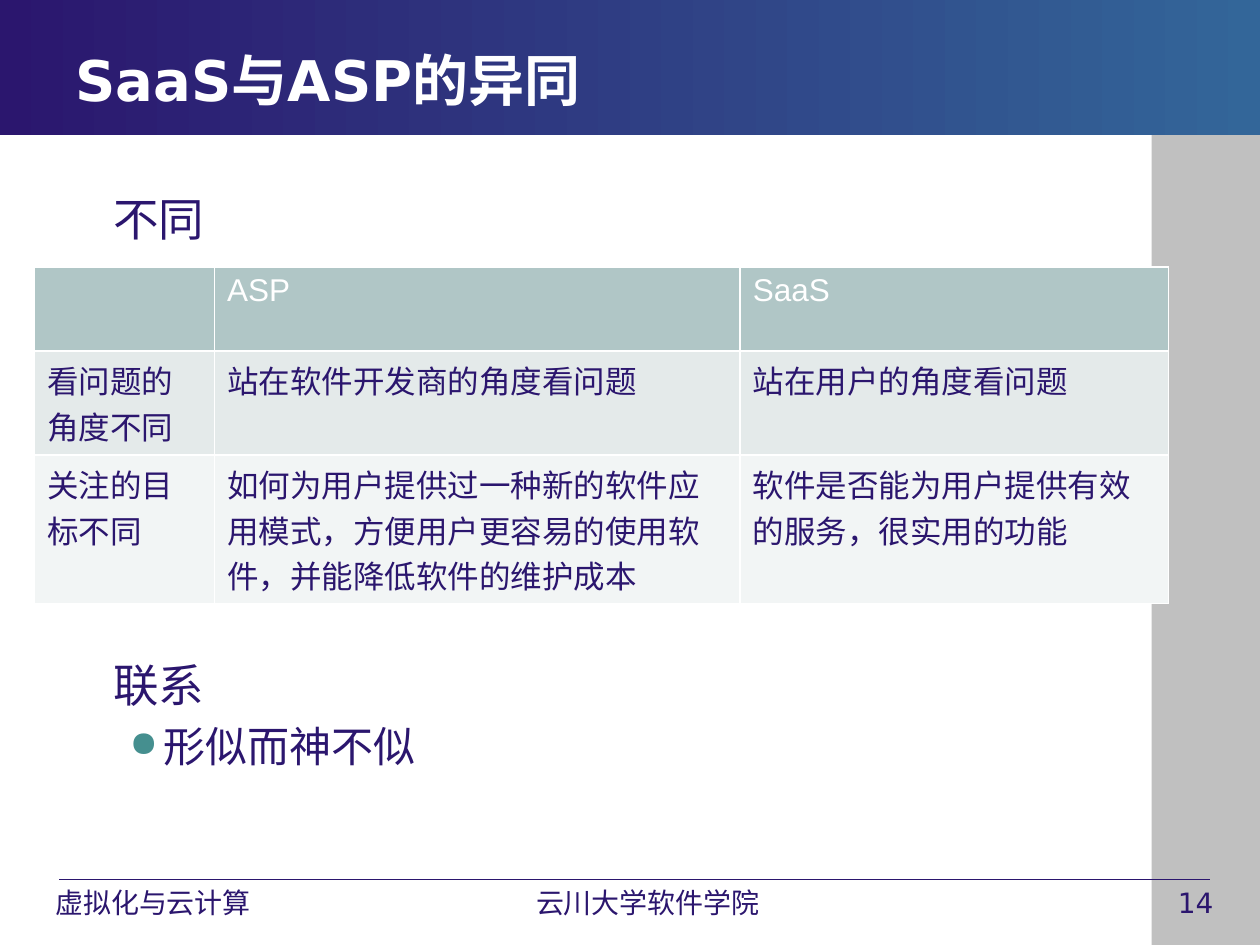
from lxml import etree
from pptx import Presentation
from pptx.dml.color import RGBColor
from pptx.enum.shapes import MSO_CONNECTOR, MSO_SHAPE
from pptx.enum.text import MSO_ANCHOR, PP_ALIGN
from pptx.oxml.ns import qn
from pptx.util import Pt

RECTANGLE = MSO_SHAPE.RECTANGLE
STRAIGHT = MSO_CONNECTOR.STRAIGHT
MIDDLE, TOP = MSO_ANCHOR.MIDDLE, MSO_ANCHOR.TOP
LEFT, CENTER = PP_ALIGN.LEFT, PP_ALIGN.CENTER

COLORS = {
    "navy": "2B166E", "blue": "336699", "gray": "C0C0C0", "white": "FFFFFF",
    "bullet": "458F8F", "header": "B0C6C6", "odd": "E4EAEA", "even": "F2F5F5",
}
COLORS = {name: RGBColor.from_string(value) for name, value in COLORS.items()}


def write(para, text, size=16, font="DejaVu Sans", color="navy", bold=False,
          align=LEFT, before=0, margin=0, hang=0, bullet=None):
    """Fill a paragraph with one formatted run; hang is the room for the bullet."""
    para.alignment = align
    para.space_before = Pt(before)
    properties = para._p.get_or_add_pPr()
    properties.set("marL", str(Pt(margin)))
    properties.set("indent", str(-Pt(hang)))
    if bullet:
        bullet_color = etree.SubElement(properties, qn("a:buClr"))
        etree.SubElement(bullet_color, qn("a:srgbClr"), val=str(COLORS["bullet"]))
        etree.SubElement(properties, qn("a:buSzPct"), val="85000")
        etree.SubElement(properties, qn("a:buChar"), char=bullet)
    span = para.add_run()
    span.text = text
    span.font.size = Pt(size)
    span.font.name = font
    span.font.bold = bold
    span.font.color.rgb = COLORS[color]


def add_box(left, top, width, height, anchor=TOP):
    """Add a wrapping text box and return its text frame."""
    box = page.shapes.add_textbox(Pt(left), Pt(top), Pt(width), Pt(height))
    box.text_frame.word_wrap = True
    box.text_frame.vertical_anchor = anchor
    return box.text_frame


deck = Presentation()
deck.slide_width, deck.slide_height = Pt(720), Pt(540)
page = deck.slides.add_slide(deck.slide_layouts[6])

# Side strip, footer rule and title band
side = page.shapes.add_shape(RECTANGLE, Pt(658), Pt(77), Pt(62), Pt(463))
side.fill.solid()
side.fill.fore_color.rgb = COLORS["gray"]

rule = page.shapes.add_connector(STRAIGHT, Pt(33.8), Pt(502.5), Pt(691.2), Pt(502.5))
rule.line.color.rgb = COLORS["navy"]
rule.line.width = Pt(0.75)
etree.SubElement(rule._element.spPr, qn("a:effectLst"))

band = page.shapes.add_shape(RECTANGLE, 0, 0, Pt(720), Pt(77))
band.fill.gradient()
band.fill.gradient_angle = 0
for stop, color in zip(band.fill.gradient_stops, ("navy", "blue")):
    stop.color.rgb = COLORS[color]

for shape in (side, band):
    shape.line.fill.background()
    shape.shadow.inherit = False

# Footer and title
for text, left, width, align in (
    ("14", 666, 51, LEFT),
    ("虚拟化与云计算", 17.5, 140, CENTER),
    ("云川大学软件学院", 288.7, 163, CENTER),
):
    write(add_box(left, 502.5, width, 25).paragraphs[0], text, align=align)

title = add_box(36, 0, 648, 90, MIDDLE)
write(title.paragraphs[0], "SaaS与ASP的异同", size=32, color="white", bold=True)

# Comparison table
COLUMN_WIDTHS = (102.8, 300.4, 244.8)
ROWS = (
    (48, "header", "white", ("", "ASP", "SaaS")),
    (59.4, "odd", "navy",
     ("看问题的角度不同", "站在软件开发商的角度看问题", "站在用户的角度看问题")),
    (85, "even", "navy",
     ("关注的目标不同",
      "如何为用户提供过一种新的软件应用模式，方便用户更容易的使用软件，并能降低软件的维护成本",
      "软件是否能为用户提供有效的服务，很实用的功能")),
)
table = page.shapes.add_table(
    len(ROWS), len(COLUMN_WIDTHS), Pt(19.8), Pt(152.6),
    Pt(sum(COLUMN_WIDTHS)), Pt(sum(row[0] for row in ROWS))).table
table.first_row = table.horz_banding = False
for column, width in zip(table.columns, COLUMN_WIDTHS):
    column.width = Pt(width)
for row, (height, fill, color, texts) in zip(table.rows, ROWS):
    row.height = Pt(height)
    for cell, text in zip(row.cells, texts):
        for edge in ("lnL", "lnR", "lnT", "lnB"):
            border = etree.SubElement(cell._tc.get_or_add_tcPr(), qn(f"a:{edge}"),
                                      w=str(Pt(1)))
            paint = etree.SubElement(border, qn("a:solidFill"))
            etree.SubElement(paint, qn("a:srgbClr"), val=str(COLORS["white"]))
        cell.fill.solid()
        cell.fill.fore_color.rgb = COLORS[fill]
        if text:
            write(cell.text_frame.paragraphs[0], text, size=18, font="Arial", color=color)

# Headings above and below the table
difference = add_box(36, 105.8, 397.4, 45.4)
write(difference.paragraphs[0], "不同", size=26, before=5, margin=21.6)

relation = add_box(36, 372.2, 648, 90.7)
write(relation.paragraphs[0], "联系", size=26, before=5, margin=21.6)
write(relation.add_paragraph(), "形似而神不似", size=24, before=5, margin=50.4,
      hang=19.4, bullet="●")

deck.save("out.pptx")
